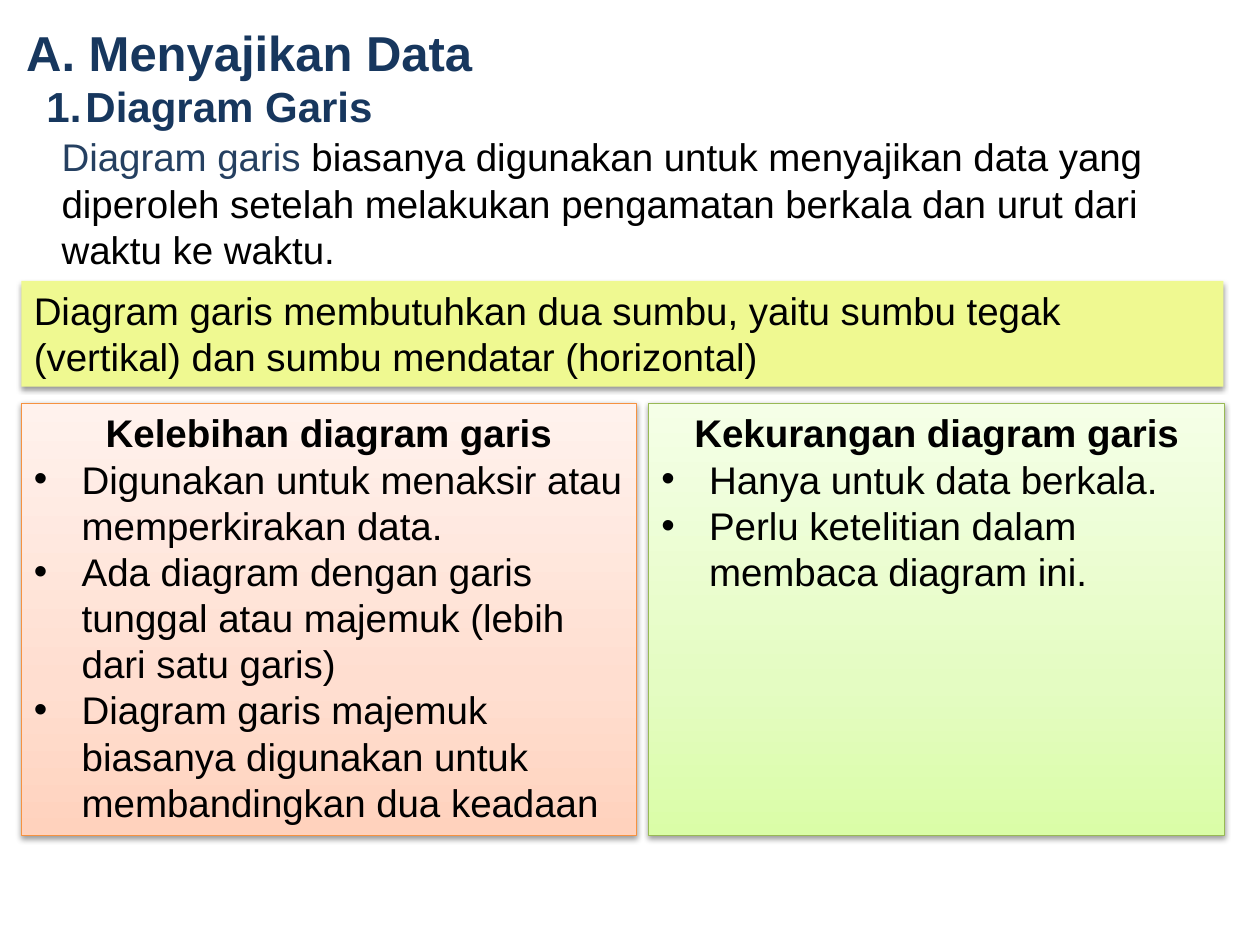
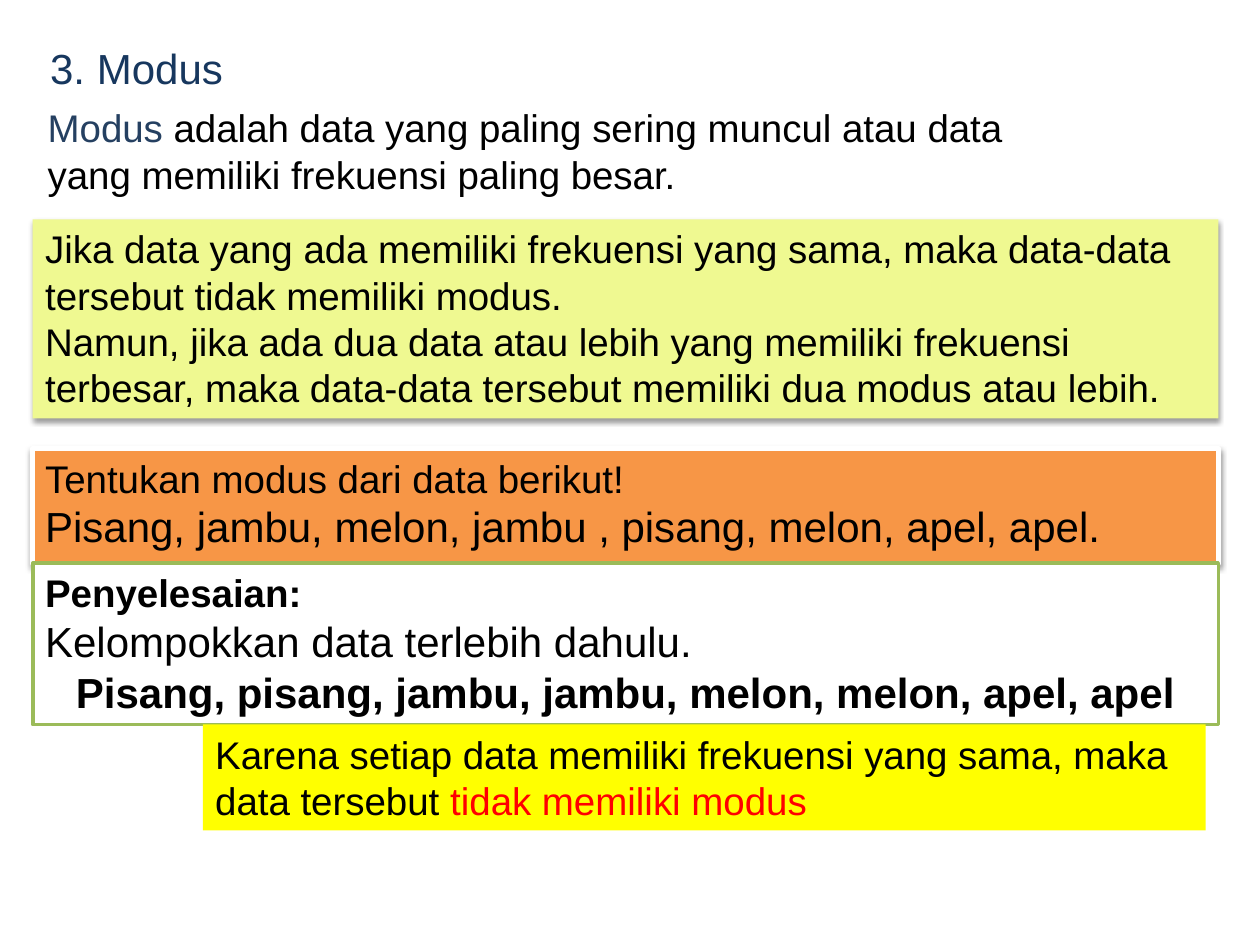
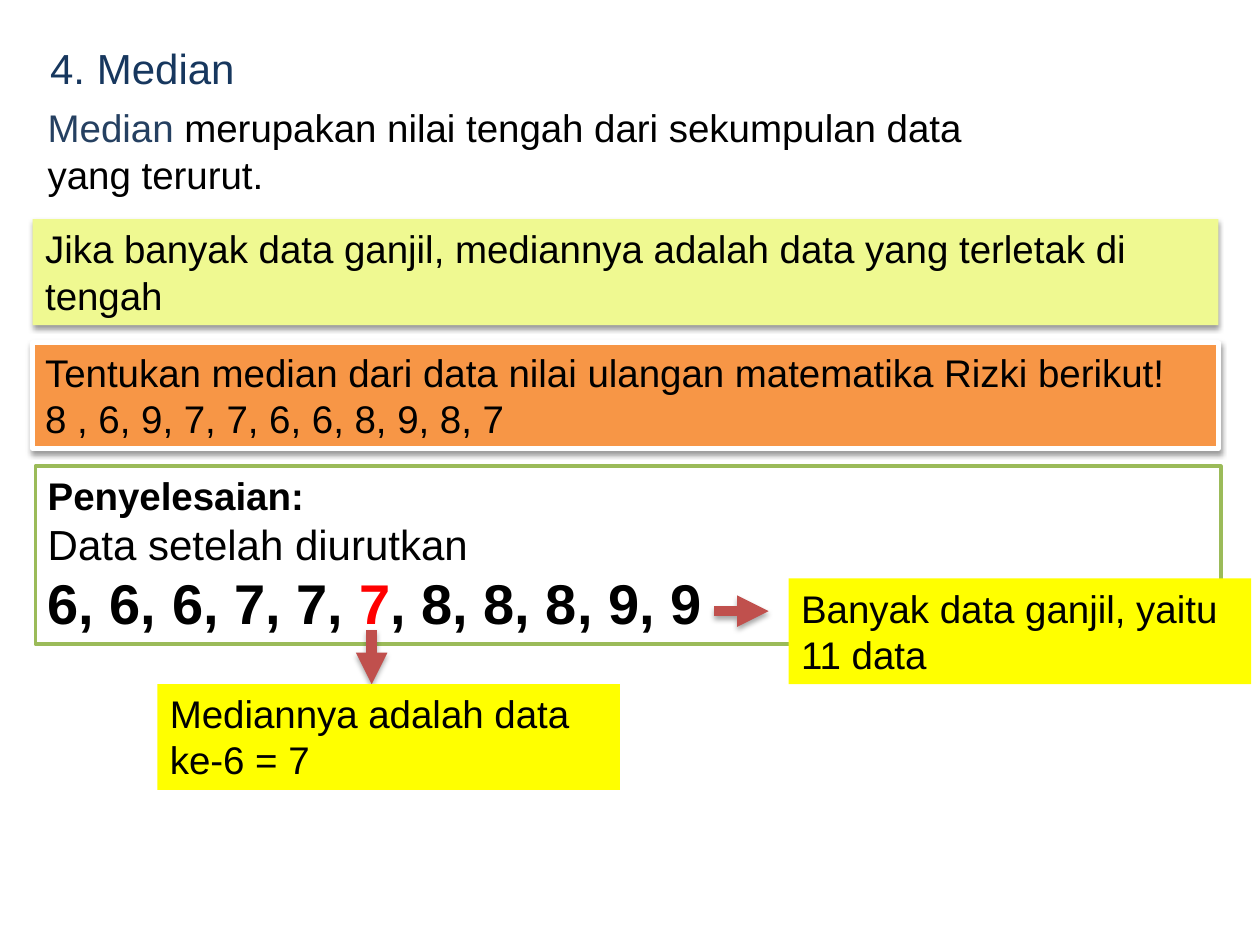
from dataclasses import dataclass
from typing import Optional

from lxml import etree
from pptx import Presentation, dml, util as u
from pptx.dml import color
from pptx.enum import shapes, text
from pptx.oxml import ns

# Shared look: 100 px to the inch
PX = 9144
FONT = "Arial"
BLACK, WHITE, RED = "000000", "FFFFFF", "FF0000"
NAVY, TERM = "17375E", "254061"
LIME, ORANGE, GREEN = "EFF991", "F79646", "9BBB59"
YELLOW, BRICK = "FFFF00", "C0504D"
CENTER = text.PP_ALIGN.CENTER


@dataclass(frozen=True)
class Run:
    words: str
    size: int = 22
    color: str = BLACK
    bold: bool = False


@dataclass(frozen=True)
class Par:
    runs: tuple[Run, ...]
    center: bool = False
    left: int = 0
    hang: int = 0
    mark: str = ""


@dataclass(frozen=True)
class Look:
    fill: tuple[str, ...] = ()
    line: str = ""
    width: float = 0
    shade: bool = False
    grow: bool = True
    wrap: bool = True


@dataclass(frozen=True)
class Box:
    left: int
    top: int
    width: int
    height: int
    pars: tuple[Par, ...]
    look: Look = Look()


@dataclass(frozen=True)
class Arrow:
    x: int
    y: int
    dx: int = 0
    dy: int = 0


PLAIN = Look(fill=(WHITE,))
LABEL = Look(wrap=False)
RULE = Look(fill=(LIME,), shade=True)
TASK = Look(fill=(ORANGE,), line=WHITE, width=3, shade=True)
SOLVE = Look(fill=(WHITE,), line=GREEN, width=2)
NOTE = Look(fill=(YELLOW,))
PEACH = Look(("FFD2BD", "FFDED0", "FFF2ED"), "F69240", 0.75, True, False)
MINT = Look(("DAFDA7", "E4FCC2", "F5FFE7"), "98B955", 0.75, True, False)


# Drawing
def rgb(code: str) -> color.RGBColor:
    return color.RGBColor.from_string(code)


def add(parent, tag: str, **attrs):
    vals = {key: str(val) for key, val in attrs.items()}
    return etree.SubElement(parent, ns.qn(tag), vals)


def shade(props, alpha: int, dist: float) -> None:
    """Drop a soft black shadow straight down."""
    glow = add(add(props, "a:effectLst"), "a:outerShdw", blurRad=u.Pt(3.1),
               dist=u.Pt(dist), dir=5400000, rotWithShape=0)
    add(add(glow, "a:srgbClr", val=BLACK), "a:alpha", val=alpha * 1000)


def paint(shape, fill: tuple[str, ...]) -> None:
    if len(fill) == 1:
        shape.fill.solid()
        shape.fill.fore_color.rgb = rgb(fill[0])
    elif fill:
        shape.fill.gradient()
        shape.fill.gradient_angle = 90
        stops = shape._element.spPr.find(".//" + ns.qn("a:gsLst"))
        for stop in list(stops):
            stops.remove(stop)
        for pos, code in zip((0, 35, 100), fill):
            add(add(stops, "a:gs", pos=pos * 1000), "a:srgbClr", val=code)


def write(para, par: Par) -> None:
    if par.center:
        para.alignment = CENTER
    props = para._p.get_or_add_pPr()
    if par.left:
        props.set("marL", str(par.left * PX))
        props.set("indent", str(-par.hang * PX))
    if par.mark:
        add(props, "a:buFont", typeface=FONT)
        if par.mark == "1.":
            add(props, "a:buAutoNum", type="arabicPeriod")
        else:
            add(props, "a:buChar", char=par.mark)
    for item in par.runs:
        run = para.add_run()
        run.text = item.words
        font = run.font
        font.name, font.size, font.bold = FONT, u.Pt(item.size), item.bold
        font.color.rgb = rgb(item.color)


def draw_box(slide, box: Box) -> None:
    look = box.look
    area = (n * PX for n in (box.left, box.top, box.width, box.height))
    shape = slide.shapes.add_textbox(*area)
    paint(shape, look.fill)
    if look.line:
        shape.line.color.rgb = rgb(look.line)
        shape.line.width = u.Pt(look.width)
    if look.shade:
        shade(shape._element.spPr, 38, 1.6)
    frame = shape.text_frame
    frame.word_wrap = look.wrap
    size = text.MSO_AUTO_SIZE
    frame.auto_size = size.SHAPE_TO_FIT_TEXT if look.grow else size.NONE
    for i, par in enumerate(box.pars):
        write(frame.add_paragraph() if i else frame.paragraphs[0], par)


def draw_arrow(slide, arrow: Arrow) -> None:
    ends = (arrow.x, arrow.y, arrow.x + arrow.dx, arrow.y + arrow.dy)
    line = slide.shapes.add_connector(shapes.MSO_CONNECTOR.STRAIGHT,
                                      *(n * PX for n in ends))
    line.line.color.rgb = rgb(BRICK)
    line.line.width = u.Pt(6)
    props = line._element.spPr
    add(props.find(ns.qn("a:ln")), "a:tailEnd", type="triangle")
    shade(props, 35, 1.8)


# Recurring parts
def say(words: str, size: int = 22, bold: bool = False,
        center: bool = False) -> Par:
    return Par((Run(words, size, BLACK, bold),), center)


def define(term: str, rest: str) -> Par:
    return Par((Run(term + " ", color=TERM), Run(rest)))


def panel(left: int, width: int, look: Look, head: str, *points: str) -> Box:
    items = (Par((Run(p),), left=38, hang=38, mark="•") for p in points)
    return Box(left, 320, width, 343,
               (say(head, bold=True, center=True), *items), look)


def topic(head: str, width: int, *pars: Par) -> list[Box]:
    label = Par((Run(head, 24, NAVY),), left=18)
    return [Box(12, 29, width, 50, (label,), LABEL),
            Box(28, 78, 811, 84, pars, PLAIN)]


def band(top: int, height: int, look: Look, *pars: Par, left: int = 26) -> Box:
    return Box(left, top, 941, height, pars, look)


def note(left: int, top: int, width: int, *runs: Run) -> Box:
    return Box(left, top, width, 84, (Par(runs),), NOTE)


# Slides
LINES = [
    Box(39, 101, 951, 121, (define(
        "Diagram garis",
        "biasanya digunakan untuk menyajikan data yang diperoleh setelah "
        "melakukan pengamatan berkala dan urut dari waktu ke waktu."),), PLAIN),
    Box(11, 13, 839, 57, (Par((Run("A. Menyajikan Data", 28, NAVY, True),)),)),
    Box(9, 59, 300, 50, (Par((Run("Diagram Garis", 24, NAVY, True),),
                             left=49, hang=31, mark="1."),), LABEL),
    panel(515, 457, MINT, "Kekurangan diagram garis",
          "Hanya untuk data berkala.",
          "Perlu ketelitian dalam membaca diagram ini."),
    panel(17, 488, PEACH, "Kelebihan diagram garis",
          "Digunakan untuk menaksir atau memperkirakan data.",
          "Ada diagram dengan garis tunggal atau majemuk (lebih dari satu garis)",
          "Diagram garis majemuk biasanya digunakan untuk membandingkan dua "
          "keadaan"),
    Box(17, 223, 954, 84, (say(
        "Diagram garis membutuhkan dua sumbu, yaitu sumbu tegak (vertikal) "
        "dan sumbu mendatar (horizontal)"),), RULE),
]

MODE = [
    *topic("3. Modus", 177,
           define("Modus", "adalah data yang paling sering muncul atau data"),
           say("yang memiliki frekuensi paling besar.")),
    band(356, 91, TASK, say("Tentukan modus dari data berikut!"),
         say("Pisang, jambu, melon, jambu , pisang, melon, apel, apel.", 24)),
    band(174, 158, RULE,
         say("Jika data yang ada memiliki frekuensi yang sama, maka data-data "
             "tersebut tidak memiliki modus."),
         say("Namun, jika ada dua data atau lebih yang memiliki frekuensi "
             "terbesar, maka data-data tersebut memiliki dua modus atau "
             "lebih.")),
    band(447, 128, SOLVE, say("Penyelesaian:", bold=True),
         say("Kelompokkan data terlebih dahulu.", 24),
         say("Pisang, pisang, jambu, jambu, melon, melon, apel, apel",
             24, True, True)),
    note(161, 575, 796,
         Run("Karena setiap data memiliki frekuensi yang sama, maka data "
             "tersebut "),
         Run("tidak memiliki modus", color=RED)),
]

MEDIAN = [
    *topic("4. Median", 187, define(
        "Median", "merupakan nilai tengah dari sekumpulan data yang terurut.")),
    band(272, 84, TASK,
         say("Tentukan median dari data nilai ulangan matematika Rizki "
             "berikut!"),
         say("8 , 6, 9, 7, 7, 6, 6, 8, 9, 8, 7")),
    band(174, 84, RULE,
         say("Jika banyak data ganjil, mediannya adalah data yang terletak di "
             "tengah")),
    band(370, 141, SOLVE, say("Penyelesaian:", bold=True),
         say("Data setelah diurutkan", 24),
         Par((Run("6, 6, 6, 7, 7, ", 32, BLACK, True),
              Run("7", 32, RED, True),
              Run(", 8, 8, 8, 9, 9", 32, BLACK, True))), left=28),
    Arrow(567, 485, dx=43),
    note(626, 459, 367, Run("Banyak data ganjil, yaitu 11 data")),
    Arrow(295, 500, dy=43),
    note(125, 543, 367, Run("Mediannya adalah data ke-6 = 7")),
]


def main() -> None:
    deck = Presentation()
    deck.slide_width, deck.slide_height = 1000 * PX, 750 * PX
    for parts in (LINES, MODE, MEDIAN):
        slide = deck.slides.add_slide(deck.slide_layouts[6])
        for part in parts:
            draw = draw_arrow if isinstance(part, Arrow) else draw_box
            draw(slide, part)
    deck.save("out.pptx")


if __name__ == "__main__":
    main()
